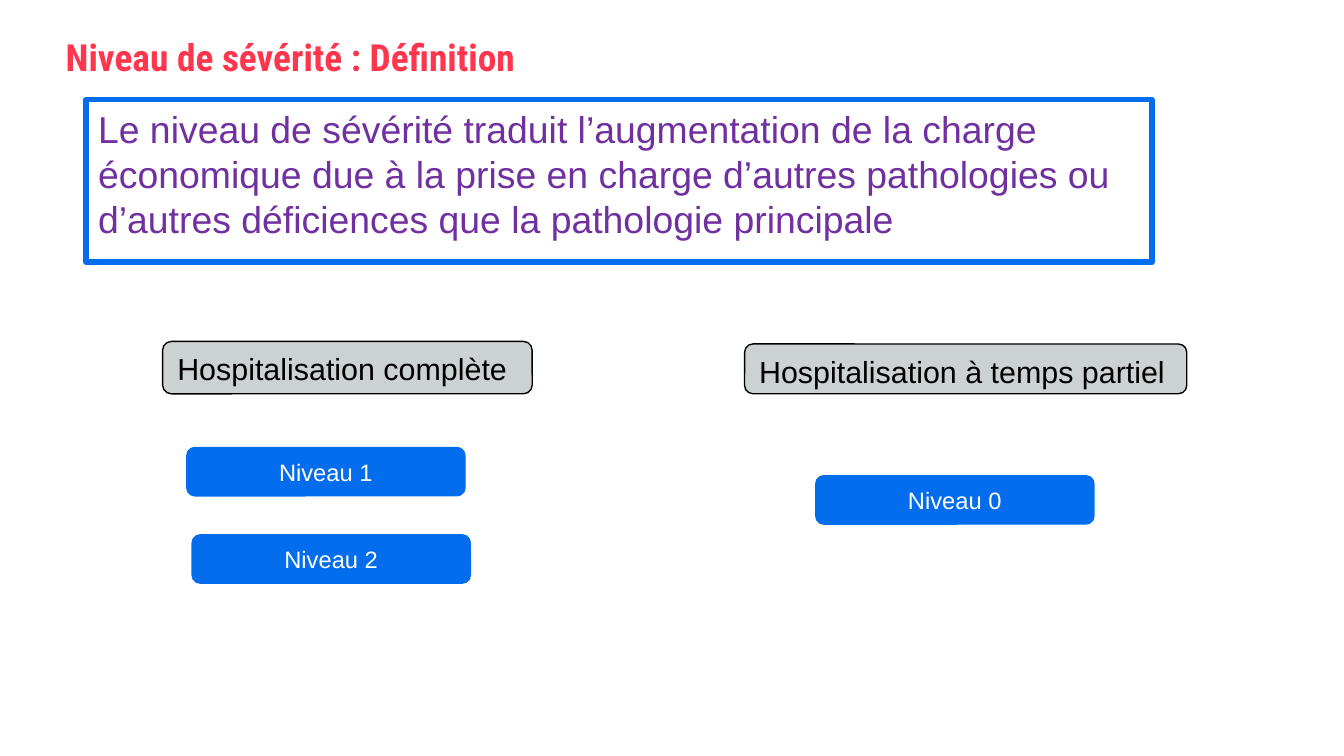
from pptx import Presentation
from pptx.dml.color import RGBColor
from pptx.enum import shapes, text
from pptx.util import Inches, Pt

RED = RGBColor(0xFF, 0x36, 0x4D)
BLUE = RGBColor(0x03, 0x6D, 0xED)
PURPLE = RGBColor(0x70, 0x30, 0xA0)
GREY = RGBColor(0xCC, 0xD1, 0xD1)
BLACK = RGBColor(0, 0, 0)
WHITE = RGBColor(0xFF, 0xFF, 0xFF)

DEFINITION = (
    "Le niveau de sévérité traduit l’augmentation de la charge",
    "économique due à la prise en charge d’autres pathologies ou",
    "d’autres déficiences que la pathologie principale",
)


def write(shape, *lines, size, color, font="Arial", bold=False, spacing=None,
          align=text.PP_ALIGN.LEFT, anchor=text.MSO_ANCHOR.TOP, inset=0.09):
    frame = shape.text_frame
    frame.word_wrap = True
    frame.vertical_anchor = anchor
    frame.margin_left = frame.margin_right = Inches(inset)
    frame.margin_top = frame.margin_bottom = Inches(0.05)
    for index, line in enumerate(lines):
        paragraph = frame.add_paragraph() if index else frame.paragraphs[0]
        paragraph.alignment = align
        if spacing:
            paragraph.line_spacing = Pt(spacing)
        run = paragraph.add_run()
        run.text = line
        run.font.name = font
        run.font.size = Pt(size)
        run.font.bold = bold
        run.font.color.rgb = color


def add_box(slide, kind, left, top, width, height, line, fill=None, weight=0.75):
    box = slide.shapes.add_shape(
        kind, Inches(left), Inches(top), Inches(width), Inches(height))
    box.shadow.inherit = False
    if fill is None:
        box.fill.background()
    else:
        box.fill.solid()
        box.fill.fore_color.rgb = fill
    box.line.color.rgb = line
    box.line.width = Pt(weight)
    return box


def add_title(slide, title):
    heading = slide.shapes.add_textbox(
        Inches(0.39), Inches(0.1), Inches(5.25), Inches(0.5))
    write(heading, title, size=20, color=RED, font="Roboto Condensed",
          bold=True, spacing=31.8, inset=0.1)


def add_definition(slide, lines):
    frame = add_box(slide, shapes.MSO_SHAPE.RECTANGLE, 0.64, 0.74, 7.93, 1.21,
                    line=BLUE, weight=3)
    write(frame, *lines, size=20, color=PURPLE, spacing=24)


def add_care_type(slide, label, left, top, width, height):
    header = add_box(slide, shapes.MSO_SHAPE.ROUNDED_RECTANGLE,
                     left, top, width, height, line=BLACK, fill=GREY)
    write(header, label, size=16.3, color=BLACK, spacing=19.5)


def add_level(slide, number, left, top):
    level = add_box(slide, shapes.MSO_SHAPE.ROUNDED_RECTANGLE,
                    left, top, 2.07, 0.36, line=BLUE, fill=BLUE)
    write(level, f"Niveau {number}", size=12.7, color=WHITE,
          align=text.PP_ALIGN.CENTER, anchor=text.MSO_ANCHOR.MIDDLE)


def main():
    # Widescreen page, 16:9
    deck = Presentation()
    deck.slide_width = Inches(10)
    deck.slide_height = Inches(10 * 9 / 16)
    slide = deck.slides.add_slide(deck.slide_layouts[6])

    # Title and definition
    add_title(slide, "Niveau de sévérité : Définition")
    add_definition(slide, DEFINITION)

    # Types of hospital stay
    add_care_type(slide, "Hospitalisation complète", 1.21, 2.54, 2.75, 0.39)
    add_care_type(slide, "Hospitalisation à temps partiel", 5.54, 2.56, 3.29, 0.37)

    # Severity levels under each type
    for number, left, top in ((0, 6.07, 3.54), (2, 1.43, 3.98), (1, 1.39, 3.33)):
        add_level(slide, number, left, top)

    deck.save("out.pptx")


if __name__ == "__main__":
    main()
